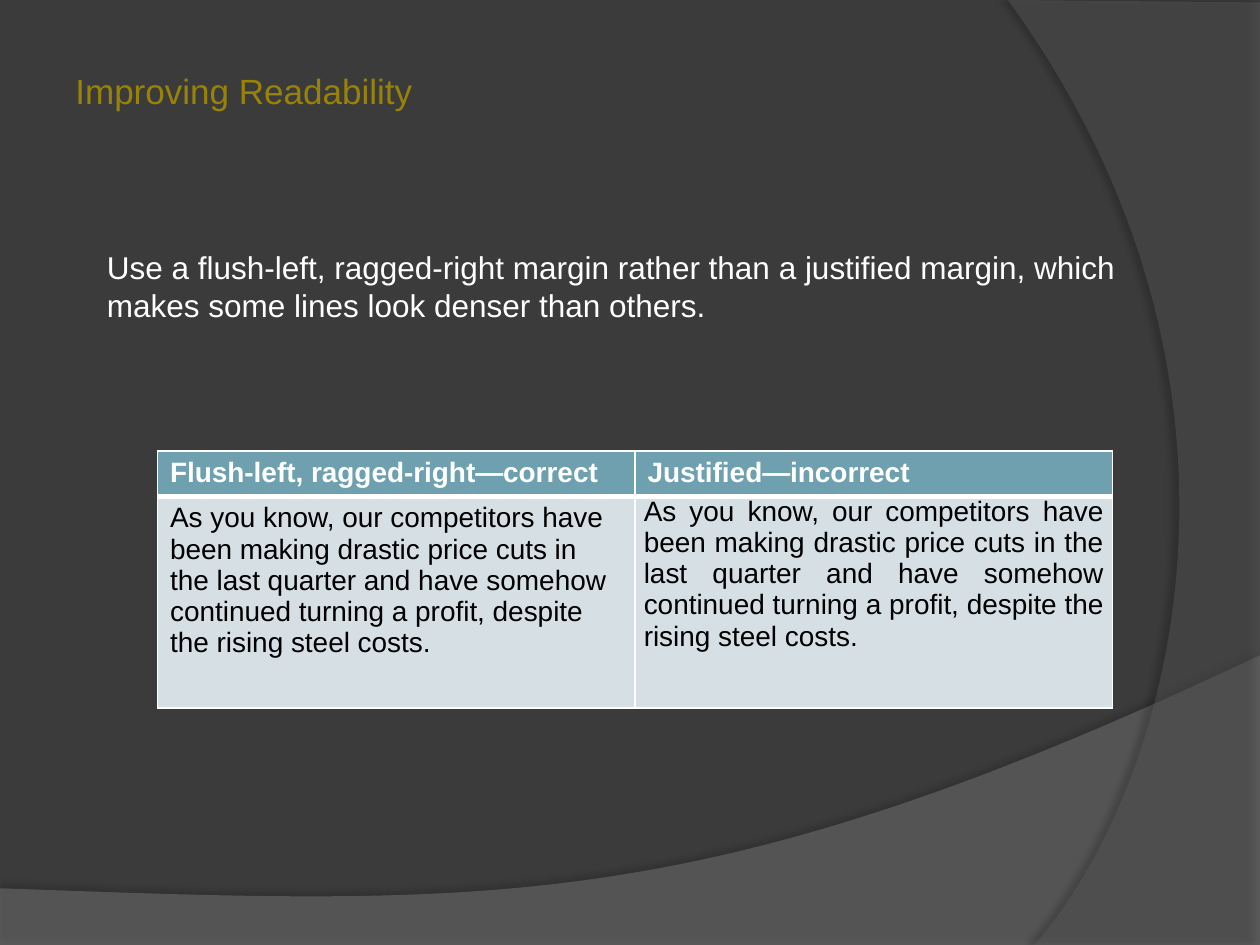
"""Build the readability slide comparing ragged-right and justified margins."""
from lxml import etree
from pptx import Presentation
from pptx.dml.color import RGBColor
from pptx.enum.text import PP_ALIGN
from pptx.oxml.ns import qn
from pptx.util import Inches, Pt

LEFT, JUSTIFY = PP_ALIGN.LEFT, PP_ALIGN.JUSTIFY
CURVE_STEPS = 60
SAMPLE = ("As you know, our competitors have been making drastic price cuts in the last "
          "quarter and have somehow continued turning a profit, despite the rising steel costs.")


def rgb(value):
    return RGBColor.from_string(value)


def write(frame, text, size, color, bold=False, align=LEFT):
    frame.word_wrap = True
    paragraph = frame.paragraphs[0]
    paragraph.alignment = align
    run = paragraph.add_run()
    run.text = text
    run.font.name = "Arial"
    run.font.size = Pt(size)
    run.font.bold = bold
    run.font.color.rgb = rgb(color)


deck = Presentation()
deck.slide_width, deck.slide_height = Inches(10), Inches(7.5)
slide = deck.slides.add_slide(deck.slide_layouts[6])
slide.background.fill.solid()
slide.background.fill.fore_color.rgb = rgb("3B3B3B")

# corners, bezier control points, fill, opacity, shadow opacity, distance, direction
swooshes = [
    ([(0, 7.05), (0, 7.51), (10, 7.51)],
     [(10, 5.2), (5.59, 7.29), (3.91, 7.19), (0, 7.05)], "7F7F7F", 45, 35, 3.5, 270),
    ([(10, 0.02), (10, 7.5)],
     [(8.21, 7.5), (9.35, 6.19), (10.18, 3), (8, 0)], "5E5E5E", 40, 45, 4, 180),
]
for corners, bezier, color, opacity, shadow_opacity, distance, direction in swooshes:
    outline = list(corners)
    for step in range(CURVE_STEPS + 1):
        t = step / CURVE_STEPS
        weights = ((1 - t) ** 3, 3 * t * (1 - t) ** 2, 3 * t ** 2 * (1 - t), t ** 3)
        outline.append(tuple(sum(w * point[axis] for w, point in zip(weights, bezier))
                             for axis in (0, 1)))
    points = [(Inches(x), Inches(y)) for x, y in outline]
    builder = slide.shapes.build_freeform(*points[0])
    builder.add_line_segments(points[1:], close=True)
    swoosh = builder.convert_to_shape()
    swoosh.fill.solid()
    swoosh.fill.fore_color.rgb = rgb(color)
    swoosh.line.fill.background()
    swoosh.shadow.inherit = False
    properties = swoosh._element.spPr
    fill_color = properties.find(qn("a:solidFill")).find(qn("a:srgbClr"))
    etree.SubElement(fill_color, qn("a:alpha"), val=str(opacity * 1000))
    shadow = etree.SubElement(properties.find(qn("a:effectLst")), qn("a:outerShdw"),
                              blurRad=str(Pt(4)), dist=str(Pt(distance)),
                              dir=str(direction * 60000), algn="ctr", rotWithShape="0")
    shadow_color = etree.SubElement(shadow, qn("a:srgbClr"), val="000000")
    etree.SubElement(shadow_color, qn("a:alpha"), val=str(shadow_opacity * 1000))

comparison = slide.shapes.add_table(2, 2, Inches(1.25), Inches(3.58),
                                    Inches(7.58), Inches(2.04)).table
comparison.horz_banding = False
comparison.rows[0].height, comparison.rows[1].height = Inches(0.36), Inches(1.68)
columns = [("Flush-left, ragged-right—correct", LEFT), ("Justified—incorrect", JUSTIFY)]
for column, (heading, align) in enumerate(columns):
    header, body = comparison.cell(0, column), comparison.cell(1, column)
    write(header.text_frame, heading, 16, "FFFFFF", bold=True)
    write(body.text_frame, SAMPLE, 16, "000000", align=align)
    if align == JUSTIFY:
        body.margin_left = body.margin_right = Inches(0.07)
        body.margin_top = body.margin_bottom = 0
    for cell, color, bottom in ((header, "6EA0B0", 3), (body, "D5DFE4", 1)):
        cell.fill.solid()
        cell.fill.fore_color.rgb = rgb(color)
        top = 3 if cell is body else 1
        edges = (("a:lnL", 1), ("a:lnR", 1), ("a:lnT", top), ("a:lnB", bottom))
        for position, (edge, width) in enumerate(edges):
            border = etree.Element(qn(edge), w=str(Pt(width)))
            border_fill = etree.SubElement(border, qn("a:solidFill"))
            etree.SubElement(border_fill, qn("a:srgbClr"), val="FFFFFF")
            cell._tc.get_or_add_tcPr().insert(position, border)

advice = slide.shapes.add_textbox(Inches(0.75), Inches(1.92), Inches(8.42), Inches(1.01))
write(advice.text_frame, "Use a flush-left, ragged-right margin rather than a justified margin, "
      "which makes some lines look denser than others.", 18, "FFFFFF")

title = slide.shapes.add_textbox(Inches(0.5), Inches(0.5), Inches(4), Inches(0.44))
write(title.text_frame, "Improving Readability", 20, "998307")

deck.save("out.pptx")
